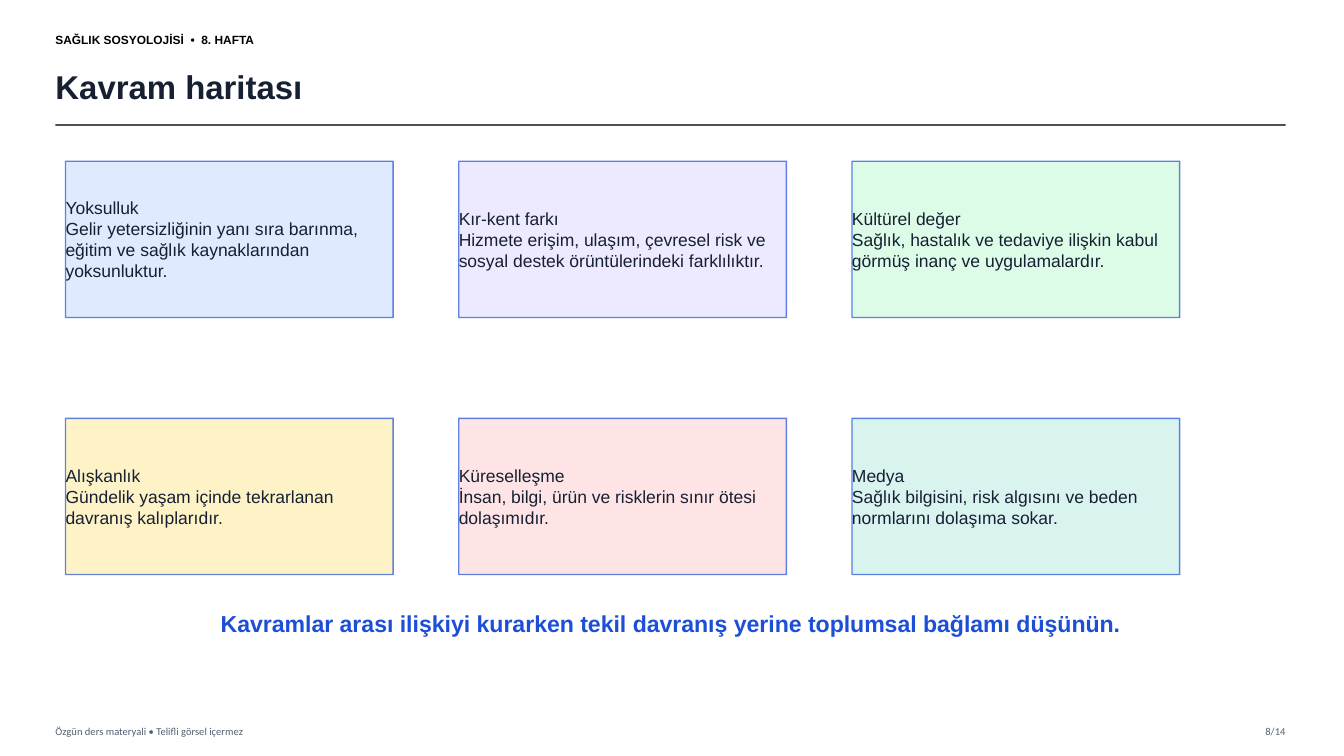
import pptx
import pptx.util
import pptx.dml.color
import pptx.enum.shapes
import pptx.enum.text
import pptx.oxml.ns
import lxml.etree

PX = 9144  # 100 px to the inch
ALIGN = pptx.enum.text.PP_ALIGN
ANCHOR = pptx.enum.text.MSO_ANCHOR
THEME = {
    "page": "FFFFFF", "rule": "333333", "edge": "1D4ED8",
    # type styles: font, size, colour, bold
    "label": ("Arial", 8.5, "000000", True),
    "title": ("Arial", 23.5, "172033", True),
    "card": ("Arial", 12.5, "172033", False),
    "hint": ("Arial", 16.5, "1D4ED8", True),
    "foot": ("Calibri", 7.5, "506070", False),
}


def write(shape, text, style, align=ALIGN.LEFT, anchor=ANCHOR.MIDDLE):
    frame = shape.text_frame
    frame.text = text
    frame.word_wrap = True
    frame.vertical_anchor = anchor
    frame.margin_left = frame.margin_right = 0
    frame.margin_top = frame.margin_bottom = 0
    face, size, color, bold = THEME[style]
    for para in frame.paragraphs:
        para.alignment = align
        for run in para.runs:
            run.font.name = face
            run.font.size = pptx.util.Pt(size)
            run.font.bold = bold
            run.font.color.rgb = pptx.dml.color.RGBColor.from_string(color)


def stroke(shape, color, width, alpha):
    """Draw the line of a shape with an opacity in percent."""
    shape.line.width = pptx.util.Pt(width)
    shape.line.color.rgb = pptx.dml.color.RGBColor.from_string(color)
    tint = shape.line._get_or_add_ln().find(".//" + pptx.oxml.ns.qn("a:srgbClr"))
    mark = lxml.etree.SubElement(tint, pptx.oxml.ns.qn("a:alpha"))
    mark.set("val", str(alpha * 1000))


deck = pptx.Presentation()
deck.slide_width = 1333 * PX
deck.slide_height = 750 * PX
slide = deck.slides.add_slide(deck.slide_layouts[6])
slide.background.fill.solid()
slide.background.fill.fore_color.rgb = pptx.dml.color.RGBColor.from_string(THEME["page"])

# Headings, footer and closing hint
texts = [
    (55, 25, 360, 28, "SAĞLIK SOSYOLOJİSİ  •  8. HAFTA", "label", ALIGN.LEFT, ANCHOR.MIDDLE),
    (55, 58, 1195, 55, "Kavram haritası", "title", ALIGN.LEFT, ANCHOR.MIDDLE),
    (55, 714, 600, 22, "Özgün ders materyali • Telifli görsel içermez", "foot",
     ALIGN.LEFT, ANCHOR.MIDDLE),
    (1210, 714, 65, 22, "8/14", "foot", ALIGN.RIGHT, ANCHOR.MIDDLE),
    (100, 605, 1130, 45,
     "Kavramlar arası ilişkiyi kurarken tekil davranış yerine toplumsal bağlamı düşünün.",
     "hint", ALIGN.CENTER, ANCHOR.TOP),
]
for left, top, width, height, text, style, align, anchor in texts:
    box = slide.shapes.add_textbox(left * PX, top * PX, width * PX, height * PX)
    write(box, text, style, align, anchor)

# Rule under the title
rule = slide.shapes.add_connector(
    pptx.enum.shapes.MSO_CONNECTOR.STRAIGHT, 55 * PX, 124 * PX, 1275 * PX, 124 * PX)
stroke(rule, THEME["rule"], 1.2, 85)
lxml.etree.SubElement(rule._element.spPr, pptx.oxml.ns.qn("a:effectLst"))

# Concept cards, three to a row
cards = [
    ("DFEAFE", "Yoksulluk",
     "Gelir yetersizliğinin yanı sıra barınma, eğitim ve sağlık kaynaklarından yoksunluktur."),
    ("EDE9FE", "Kır-kent farkı",
     "Hizmete erişim, ulaşım, çevresel risk ve sosyal destek örüntülerindeki farklılıktır."),
    ("DCFCE7", "Kültürel değer",
     "Sağlık, hastalık ve tedaviye ilişkin kabul görmüş inanç ve uygulamalardır."),
    ("FEF3C7", "Alışkanlık", "Gündelik yaşam içinde tekrarlanan davranış kalıplarıdır."),
    ("FFE4E6", "Küreselleşme", "İnsan, bilgi, ürün ve risklerin sınır ötesi dolaşımıdır."),
    ("D9F3EE", "Medya", "Sağlık bilgisini, risk algısını ve beden normlarını dolaşıma sokar."),
]
for index, (fill, term, sense) in enumerate(cards):
    row, col = divmod(index, 3)
    card = slide.shapes.add_shape(
        pptx.enum.shapes.MSO_SHAPE.RECTANGLE,
        (65 + 390 * col) * PX, (160 + 255 * row) * PX, 325 * PX, 155 * PX)
    card.shadow.inherit = False
    card.fill.solid()
    card.fill.fore_color.rgb = pptx.dml.color.RGBColor.from_string(fill)
    stroke(card, THEME["edge"], 1, 70)
    write(card, term + "\n" + sense, "card")

deck.save("out.pptx")
